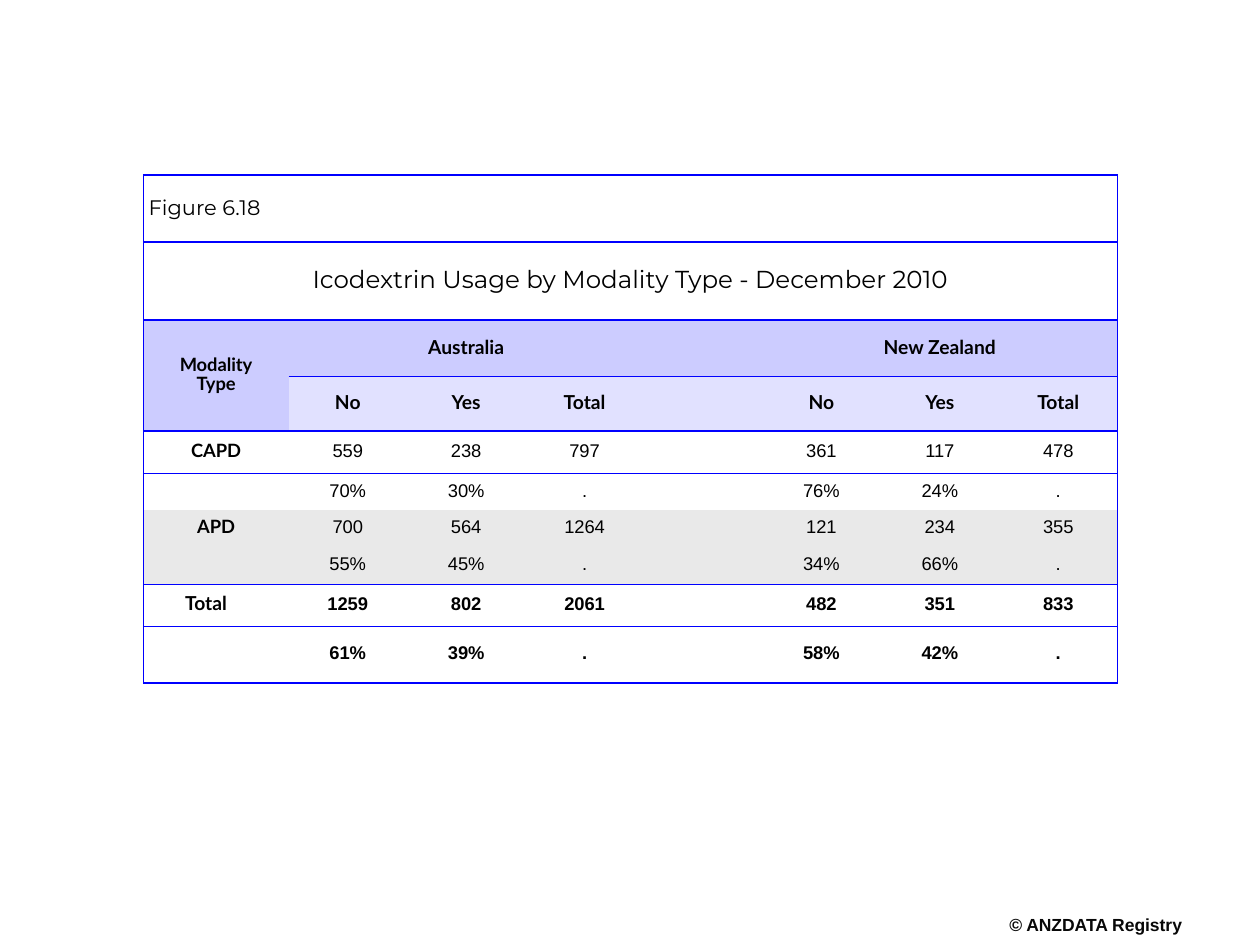
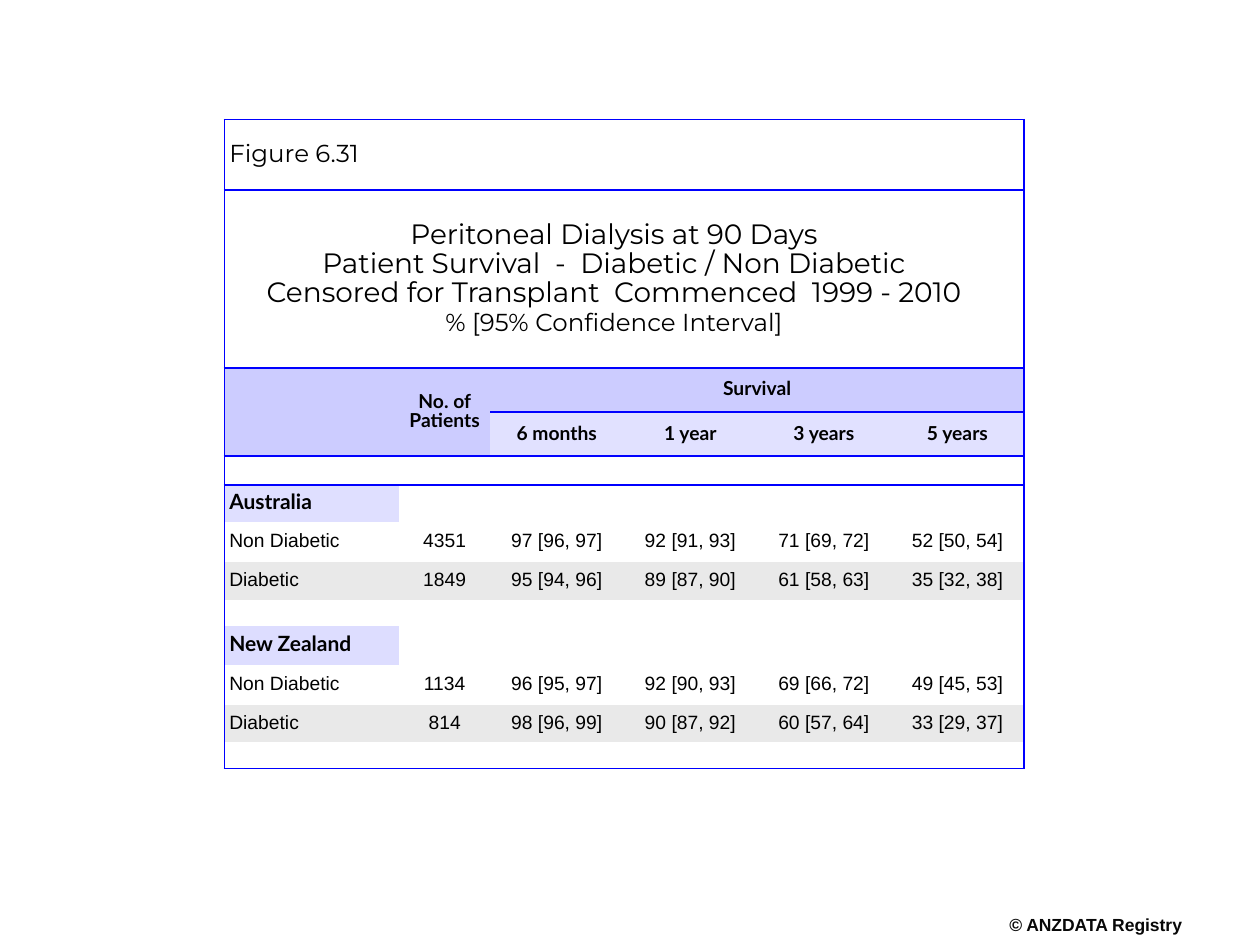
from lxml.etree import SubElement
from pptx import Presentation
from pptx.dml.color import RGBColor
from pptx.enum.text import MSO_ANCHOR as ANCHOR, MSO_AUTO_SIZE as AUTO, PP_ALIGN as ALIGN
from pptx.oxml.ns import qn
from pptx.util import Inches, Pt

THEME = {
    "text": "000000", "footer": "080808", "line": "0000FF",
    "head": "CCCCFF", "subhead": "E1E1FF", "shade": "E9E9E9",
    "australia": "DFDFFF", "new_zealand": "DDDDFF",
    "title_font": "Montserrat", "head_font": "Lato", "body_font": "Arial",
    "footer_size": 10, "empty_size": 8, "head_size": 11, "group_size": 12,
    "modality": {"figure": 12, "title": 14, "body": 10.5},
    "survival": {"figure": 14, "title": 16, "body": 11},
}
FOOTER = "© ANZDATA Registry"
HEAD = {"font": THEME["head_font"], "size": THEME["head_size"], "bold": True}
LABEL = {**HEAD, "size": THEME["modality"]["body"], "spacing": 0.75}
GROUP = {**HEAD, "size": THEME["group_size"], "spacing": 0.75, "align": ALIGN.LEFT}
LEFT = {"align": ALIGN.LEFT}
NUDGE = {"right": 0.16}

KINDS = {
    "figure": {"font": THEME["title_font"], "align": ALIGN.LEFT},
    "title": {"font": THEME["title_font"]},
    "head": {**HEAD, "fill": THEME["head"]},
    "subhead": {**HEAD, "fill": THEME["subhead"]},
    "plain": {},
    "shade": {"fill": THEME["shade"]},
    "total": {"bold": True},
}

MODALITY = {
    "sizes": THEME["modality"],
    "at": (1.14, 1.39),
    "cols": [1.15] + [0.94] * 7,
    "spans": [(0, 0, 0, 7), (1, 0, 1, 7), (2, 0, 3, 0), (2, 1, 2, 3), (2, 5, 2, 7)],
    "rules": {0: (0, 1), 1: (0, 1), 2: (0, 1), 3: (1, 1), 4: (0, 1), 8: (0, 0.75), 10: (0, 1)},
    "rows": [
        (0.53, "figure", ["Figure 6.18"]),
        (0.62, "title", ["Icodextrin Usage by Modality Type - December 2010"]),
        (0.45, "head", [[("Modality\nType", {"size": THEME["modality"]["body"]})],
                        "Australia", "", "", "", "New Zealand"]),
        (0.43, "subhead", ["", "No", "Yes", "Total", "", "No", "Yes", "Total"]),
        (0.34, "plain", [[("CAPD", LABEL)], "559", "238", "797", "", "361", "117", "478"]),
        (0.29, "plain", ["", "70%", "30%", ".", "", "76%", "24%", "."]),
        (0.29, "shade", [[("APD", LABEL)], "700", "564", "1264", "", "121", "234", "355"]),
        (0.30, "shade", ["", "55%", "45%", ".", "", "34%", "66%", "."]),
        (0.33, "total", [[("Total", {**LABEL, **HEAD, **NUDGE})],
                         "1259", "802", "2061", "", "482", "351", "833"]),
        (0.45, "total", ["", "61%", "39%", ".", "", "58%", "42%", "."]),
    ],
}

SURVIVAL = {
    "sizes": THEME["survival"],
    "at": (1.78, 0.95),
    "cols": [1.39, 0.72] + [1.06] * 4,
    "spans": [(0, 0, 0, 5), (1, 0, 1, 5), (2, 0, 3, 0), (2, 1, 3, 1), (2, 2, 2, 5)],
    "rules": {0: (0, 1), 1: (0, 1), 2: (0, 1), 3: (2, 1), 4: (0, 1), 13: (0, 1)},
    "rows": [
        (0.56, "figure", ["Figure 6.31"]),
        (1.41, "title", [[
            ("Peritoneal Dialysis at 90 Days", NUDGE),
            ("Patient Survival  -  Diabetic / Non Diabetic\n"
             "Censored for Transplant  Commenced  1999 - 2010", {}),
            ("% [95% Confidence Interval]",
             {"size": THEME["survival"]["figure"], "before": 2}),
        ]]),
        (0.35, "head", ["", "No. of\nPatients", "Survival"]),
        (0.35, "subhead", ["", "", "6 months", "1 year", "3 years", "5 years"]),
        (0.23, "plain", []),
        (0.29, "plain", [[("Australia", {**GROUP, "fill": THEME["australia"]})]]),
        (0.32, "plain", [[("Non Diabetic", LEFT)], "4351",
                         "97 [96, 97]", "92 [91, 93]", "71 [69, 72]", "52 [50, 54]"]),
        (0.30, "shade", [[("Diabetic", LEFT)], "1849",
                         "95 [94, 96]", "89 [87, 90]", "61 [58, 63]", "35 [32, 38]"]),
        (0.21, "plain", []),
        (0.31, "plain", [[("New Zealand", {**GROUP, "fill": THEME["new_zealand"]})]]),
        (0.32, "plain", [[("Non Diabetic", LEFT)], "1134",
                         "96 [95, 97]", "92 [90, 93]", "69 [66, 72]", "49 [45, 53]"]),
        (0.29, "shade", [[("Diabetic", LEFT)], "814",
                         "98 [96, 99]", "90 [87, 92]", "60 [57, 64]", "33 [29, 37]"]),
        (0.21, "plain", []),
    ],
}

NO_STYLE = "{2D5ABB26-0587-4C30-8999-92F81FD0307C}"


def put_text(tf, text, *, size, font=THEME["body_font"], bold=False, color=THEME["text"],
             align=ALIGN.CENTER, spacing=0.85, before=0, right=0):
    for line in text.split("\n"):
        p = tf.paragraphs[-1]
        if p.runs:
            p = tf.add_paragraph()
            if before:
                p.space_before = Pt(before)
        p.alignment, p.line_spacing = align, spacing
        if right:
            p._p.get_or_add_pPr().set("marR", str(Inches(right)))
        r = p.add_run()
        r.text = line
        r.font.name, r.font.size, r.font.bold = font, Pt(size), bold
        r.font.color.rgb = RGBColor.from_string(color)


def add_border(cell, side, width):
    ln = SubElement(cell._tc.get_or_add_tcPr(), qn(f"a:ln{side}"), w=str(Pt(width)))
    fill = SubElement(ln, qn("a:solidFill"))
    SubElement(fill, qn("a:srgbClr"), val=THEME["line"])


def border_cell(cell, row, col, table):
    last_col = col + (cell.span_width if cell.is_merge_origin else 1)
    last_row = row + (cell.span_height if cell.is_merge_origin else 1)
    if col == 0:
        add_border(cell, "L", 1)
    if last_col == len(table["cols"]):
        add_border(cell, "R", 1)
    for side, edge in (("T", row), ("B", last_row)):
        start, width = table["rules"].get(edge, (len(table["cols"]), 0))
        if col >= start:
            add_border(cell, side, width)


def fill_cell(cell, kind, content, sizes):
    parts = content if isinstance(content, list) else [(content, {})]
    base = {"size": sizes.get(kind, sizes["body"]), **KINDS[kind]}
    fill = {**base, **parts[0][1]}.get("fill")
    if fill:
        cell.fill.solid()
        cell.fill.fore_color.rgb = RGBColor.from_string(fill)
    else:
        cell.fill.background()
    cell.vertical_anchor = ANCHOR.MIDDLE
    cell.margin_left = cell.margin_right = Inches(0.04)
    cell.margin_top = cell.margin_bottom = Inches(0.04 if kind in ("figure", "title") else 0.02)
    if not content:
        p = cell.text_frame.paragraphs[0]
        SubElement(p._p, qn("a:endParaRPr"), sz=str(THEME["empty_size"] * 100))
        return
    for text, extra in parts:
        fmt = {**base, **extra}
        fmt.pop("fill", None)
        put_text(cell.text_frame, text, **fmt)


def add_figure_table(s, table):
    cols, rows = table["cols"], table["rows"]
    left, top = table["at"]
    frame = s.shapes.add_table(len(rows), len(cols), Inches(left), Inches(top),
                               Inches(sum(cols)), Inches(sum(row[0] for row in rows)))
    tbl = frame.table
    tbl.first_row = tbl.horz_banding = False
    tbl._tbl.tblPr.find(qn("a:tableStyleId")).text = NO_STYLE
    for col, width in enumerate(cols):
        tbl.columns[col].width = Inches(width)
    for r1, c1, r2, c2 in table["spans"]:
        tbl.cell(r1, c1).merge(tbl.cell(r2, c2))
    for row, (height, kind, contents) in enumerate(rows):
        tbl.rows[row].height = Inches(height)
        padded = contents + [""] * (len(cols) - len(contents))
        for col, content in enumerate(padded):
            cell = tbl.cell(row, col)
            border_cell(cell, row, col, table)
            fill_cell(cell, kind, content, table["sizes"])


def add_footer(s):
    sp = s.shapes.add_textbox(Inches(7.99), Inches(7.28), Inches(1.41), Inches(0.17))
    tf = sp.text_frame
    tf.margin_left = tf.margin_right = tf.margin_top = tf.margin_bottom = 0
    tf.word_wrap, tf.auto_size = False, AUTO.SHAPE_TO_FIT_TEXT
    put_text(tf, FOOTER, size=THEME["footer_size"], bold=True, color=THEME["footer"])


def main():
    prs = Presentation()
    prs.slide_width, prs.slide_height = Inches(10), Inches(7.5)
    for table in (MODALITY, SURVIVAL):
        s = prs.slides.add_slide(prs.slide_layouts[6])
        add_footer(s)
        add_figure_table(s, table)
    prs.save("out.pptx")


if __name__ == "__main__":
    main()
